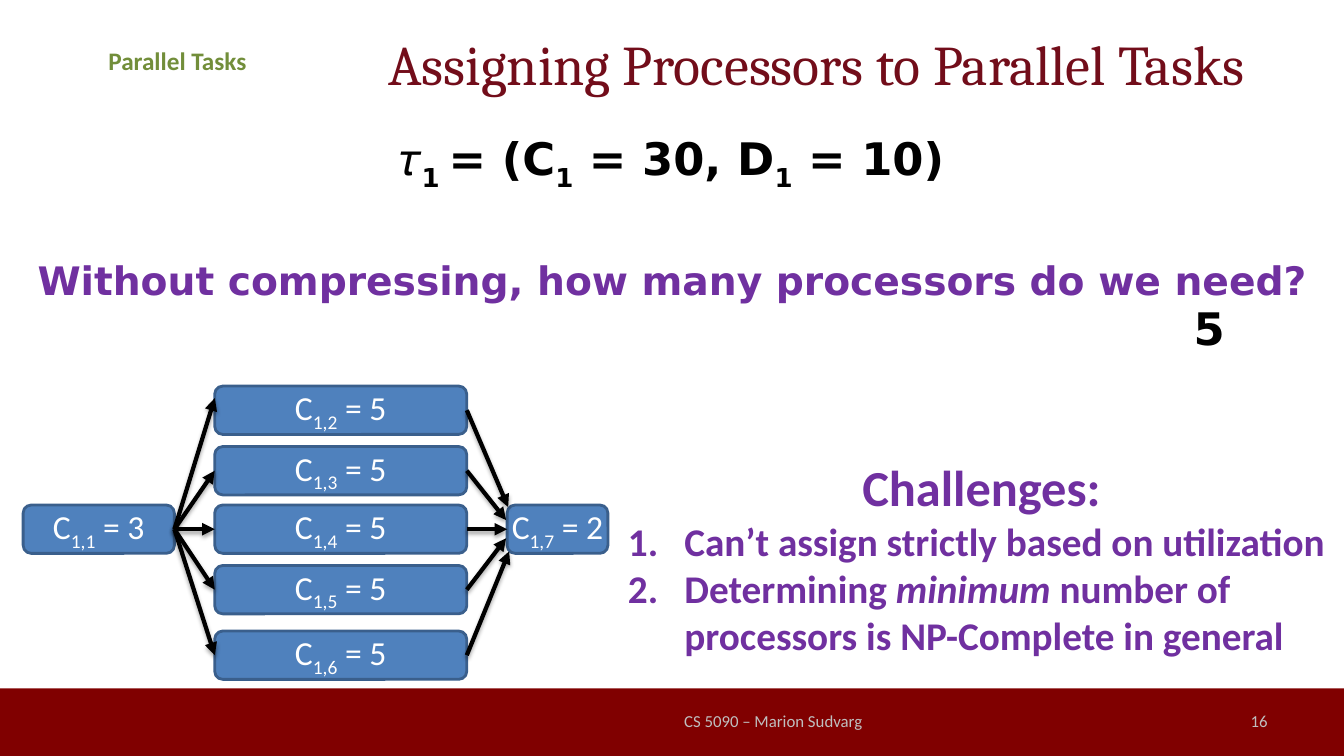
from lxml import etree
from pptx import Presentation
from pptx.dml.color import RGBColor
from pptx.enum.shapes import MSO_CONNECTOR, MSO_SHAPE
from pptx.enum.text import MSO_ANCHOR, MSO_AUTO_SIZE, PP_ALIGN
from pptx.oxml.ns import qn
from pptx.util import Inches, Pt

LEFT, CENTER, RIGHT = PP_ALIGN.LEFT, PP_ALIGN.CENTER, PP_ALIGN.RIGHT
TOP, MIDDLE = MSO_ANCHOR.TOP, MSO_ANCHOR.MIDDLE
RECTANGLE, ROUNDED = MSO_SHAPE.RECTANGLE, MSO_SHAPE.ROUNDED_RECTANGLE
STRAIGHT = MSO_CONNECTOR.STRAIGHT
NO_AUTOSIZE = MSO_AUTO_SIZE.NONE

COLORS = {
    "band": "800000", "footer": "BFBFBF", "title": "720D1A", "topic": "728E3A",
    "question": "7030A0", "ink": "000000", "node": "4F81BD",
    "node_edge": "3A5F8C", "node_text": "FFFFFF",
}
BODY_FONT, TITLE_FONT, MATH_FONT = "Calibri", "Cambria", "DejaVu Sans"

NODE_HEIGHT = 0.48
MIDDLE_ROW_TOP = 5.01
SOURCE_LEFT, SOURCE_WIDTH = 0.23, 1.5
PARALLEL_LEFT, PARALLEL_WIDTH = 2.13, 2.5
SINK_LEFT, SINK_WIDTH = 5.03, 1.0
# Node top, height where the incoming arrow ends, point where the outgoing one ends
PARALLEL_ROWS = [
    (3.83, 3.95, (5.04, 5.03)),
    (4.43, 4.67, (5.02, 5.16)),
    (5.01, 5.25, (5.03, 5.25)),
    (5.61, 5.85, (5.02, 5.34)),
    (6.26, 6.5, (5.05, 5.47)),
]


def color(name):
    return RGBColor.from_string(COLORS[name])


def place(shape, left, top, width, height):
    shape.left, shape.top = Inches(left), Inches(top)
    shape.width, shape.height = Inches(width), Inches(height)


def sub(text):
    return text, {"subscript": True}


def write(para, *spans, size, ink, font=BODY_FONT, bold=False, align=LEFT, before=0):
    """Fill a paragraph; a span is a string or a (text, options) pair."""
    para.alignment = align
    para.space_before = Pt(before)
    for span in spans:
        text, options = (span, {}) if isinstance(span, str) else span
        run = para.add_run()
        run.text = text
        run.font.name = font
        run.font.size = Pt(size)
        run.font.bold = bold
        run.font.italic = options.get("italic", False)
        run.font.color.rgb = color(ink)
        if options.get("subscript"):
            run.font._element.set("baseline", "-25000")


def set_bullet(para, hanging=0.0, numbered=False):
    properties = para._p.get_or_add_pPr()
    properties.set("marL", str(Inches(hanging)))
    properties.set("indent", str(-Inches(hanging)))
    if numbered:
        bullet = etree.SubElement(properties, qn("a:buAutoNum"))
        bullet.set("type", "arabicPeriod")
    else:
        etree.SubElement(properties, qn("a:buNone"))


def add_text_box(page, left, top, width, height, anchor=TOP, wrap=True):
    box = page.shapes.add_textbox(*map(Inches, (left, top, width, height)))
    frame = box.text_frame
    frame.word_wrap = wrap
    frame.vertical_anchor = anchor
    return frame


def add_filled_shape(page, kind, left, top, width, height, fill):
    shape = page.shapes.add_shape(kind, *map(Inches, (left, top, width, height)))
    shape.shadow.inherit = False
    shape.fill.solid()
    shape.fill.fore_color.rgb = color(fill)
    shape.line.fill.background()
    return shape


def add_node(page, number, cost, left, top, width, side_inset=0.1):
    node = add_filled_shape(page, ROUNDED, left, top, width, NODE_HEIGHT, "node")
    node.line.color.rgb = color("node_edge")
    node.line.width = Pt(2)
    frame = node.text_frame
    frame.vertical_anchor = MIDDLE
    frame.margin_left = frame.margin_right = Inches(side_inset)
    write(frame.paragraphs[0], "C", sub(f"1,{number}"), f" = {cost}",
          size=24, ink="node_text", align=CENTER)


def add_arrow(page, start, end):
    arrow = page.shapes.add_connector(STRAIGHT, *map(Inches, (*start, *end)))
    arrow.line.color.rgb = color("ink")
    arrow.line.width = Pt(3)
    etree.SubElement(arrow.line._get_or_add_ln(), qn("a:tailEnd")).set("type", "triangle")
    effects = etree.SubElement(arrow._element.spPr, qn("a:effectLst"))
    shadow = etree.SubElement(effects, qn("a:outerShdw"), blurRad=str(Pt(3.1)),
                              dist=str(Pt(1.8)), dir="5400000", rotWithShape="0")
    tone = etree.SubElement(shadow, qn("a:srgbClr"), val=COLORS["ink"])
    etree.SubElement(tone, qn("a:alpha"), val="35000")


def add_footer(page):
    add_filled_shape(page, RECTANGLE, 0, 6.83, 13.33, 0.67, "band")
    for text, left, width, align in [("16", 9.56, 3.11, RIGHT),
                                     ("CS 5090 – Marion Sudvarg", 5.56, 4.22, CENTER)]:
        frame = add_text_box(page, left, 6.95, width, 0.4, anchor=MIDDLE)
        write(frame.paragraphs[0], text, size=12, ink="footer", align=align)


def fill_title(page):
    title = page.shapes.title
    place(title, 3.09, 0, 10.01, 1.25)
    title.text_frame.vertical_anchor = MIDDLE
    title.text_frame.auto_size = NO_AUTOSIZE
    write(title.text_frame.paragraphs[0], "Assigning Processors to Parallel Tasks",
          size=40, ink="title", font=TITLE_FONT, align=CENTER)


def fill_body(page):
    body = page.placeholders[1]
    place(body, 0.23, 1.25, 12.87, 5.45)
    frame = body.text_frame
    frame.auto_size = NO_AUTOSIZE
    task, question = frame.paragraphs[0], frame.add_paragraph()
    for para in (task, question):
        set_bullet(para)
    write(task, "𝜏", sub("1 "), "= (C", sub("1"), " = 30, D", sub("1"), " = 10)",
          size=32, ink="ink", font=MATH_FONT, bold=True, align=CENTER)
    write(question, "Without compressing, how many processors do we need?",
          size=28, ink="question", font=MATH_FONT, bold=True, align=CENTER, before=46)


def add_task_graph(page):
    add_node(page, 1, 3, SOURCE_LEFT, MIDDLE_ROW_TOP, SOURCE_WIDTH)
    add_node(page, 7, 2, SINK_LEFT, MIDDLE_ROW_TOP, SINK_WIDTH, side_inset=0)
    for number, (top, _, _) in enumerate(PARALLEL_ROWS, start=2):
        add_node(page, number, 5, PARALLEL_LEFT, top, PARALLEL_WIDTH)
    half = NODE_HEIGHT / 2
    fork = (SOURCE_LEFT + SOURCE_WIDTH, MIDDLE_ROW_TOP + half)
    for top, entry, sink_point in PARALLEL_ROWS:
        add_arrow(page, fork, (PARALLEL_LEFT, entry))
        add_arrow(page, (PARALLEL_LEFT + PARALLEL_WIDTH, top + half), sink_point)


def add_challenges(page):
    frame = add_text_box(page, 6.13, 4.48, 7.21, 2.12)
    write(frame.paragraphs[0], "Challenges:", size=36, ink="question",
          bold=True, align=CENTER)
    challenges = [
        ["Can’t assign strictly based on utilization"],
        ["Determining ", ("minimum", {"italic": True}),
         " number of processors is NP-Complete in general"],
    ]
    for spans in challenges:
        para = frame.add_paragraph()
        set_bullet(para, hanging=0.56, numbered=True)
        write(para, *spans, size=28, ink="question", bold=True)


def main():
    deck = Presentation()
    deck.slide_width, deck.slide_height = Inches(13.33), Inches(7.5)
    page = deck.slides.add_slide(deck.slide_layouts[1])
    add_footer(page)
    fill_title(page)
    fill_body(page)
    topic = add_text_box(page, 0.67, 0.4, 2.18, 0.4)
    write(topic.paragraphs[0], "Parallel Tasks", size=18, ink="topic",
          bold=True, align=CENTER)
    add_task_graph(page)
    add_challenges(page)
    answer = add_text_box(page, 11.74, 2.93, 0.52, 0.64, wrap=False)
    write(answer.paragraphs[0], "5", size=32, ink="ink", font=MATH_FONT, bold=True)
    deck.save("out.pptx")


if __name__ == "__main__":
    main()
